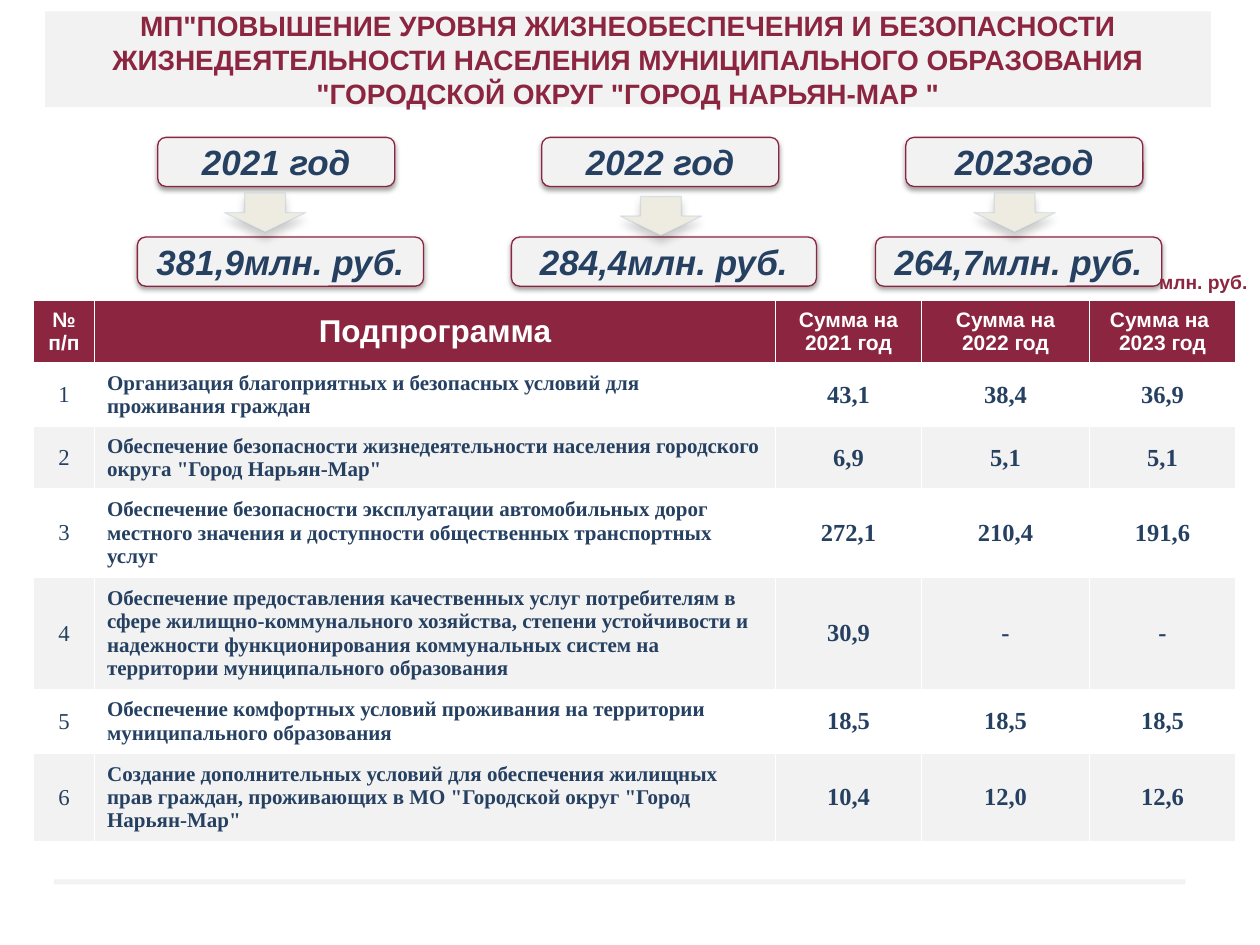
from lxml import etree
from pptx import Presentation
from pptx import util as u
from pptx.dml.color import RGBColor
from pptx.enum import shapes, text
from pptx.oxml import ns

WINE, NAVY, PALE, WHITE = "8C2540", "254061", "F2F2F2", "FFFFFF"
SANS, SERIF = "Arial", "Times New Roman"

TITLE = ('МП"ПОВЫШЕНИЕ УРОВНЯ ЖИЗНЕОБЕСПЕЧЕНИЯ И БЕЗОПАСНОСТИ '
         'ЖИЗНЕДЕЯТЕЛЬНОСТИ НАСЕЛЕНИЯ МУНИЦИПАЛЬНОГО ОБРАЗОВАНИЯ '
         '"ГОРОДСКОЙ ОКРУГ "ГОРОД НАРЬЯН-МАР "')

# year, total, left of year box, left and width of total box, arrow left and top (cm)
YEARS = [
    ("2021 год", "381,9млн. руб.", 3.18, 2.77, 5.77, 4.52, 3.89),
    ("2022 год", "284,4млн. руб.", 10.92, 10.31, 6.15, 12.5, 3.96),
    ("2023год", "264,7млн. руб.", 18.26, 17.65, 5.77, 19.63, 3.89),
]

HEADER = ["№ п/п", "Подпрограмма", "Сумма на 2021 год", "Сумма на 2022 год",
          "Сумма на \n2023 год"]
PROGRAMMES = [
    ("Организация благоприятных и безопасных условий для проживания граждан",
     "43,1", "38,4", "36,9"),
    ("Обеспечение безопасности жизнедеятельности населения городского округа "
     '"Город Нарьян-Мар"', "6,9", "5,1", "5,1"),
    ("Обеспечение безопасности эксплуатации автомобильных дорог местного значения "
     "и доступности общественных транспортных услуг", "272,1", "210,4", "191,6"),
    ("Обеспечение предоставления качественных услуг потребителям в сфере "
     "жилищно-коммунального хозяйства, степени устойчивости и надежности "
     "функционирования коммунальных систем на территории муниципального образования",
     "30,9", "-", "-"),
    ("Обеспечение комфортных условий проживания на территории муниципального "
     "образования", "18,5", "18,5", "18,5"),
    ("Создание дополнительных условий для обеспечения жилищных прав граждан, "
     'проживающих в МО "Городской округ "Город Нарьян-Мар"', "10,4", "12,0", "12,6"),
]
COLUMN_WIDTHS = [1.24, 13.72, 2.95, 3.38, 2.95]
ROW_HEIGHTS = [1.26, 1.28, 1.26, 1.78, 2.26, 1.29, 1.78]


def color(hex_value):
    return RGBColor.from_string(hex_value)


def paint(item, hex_value):
    item.fill.solid()
    item.fill.fore_color.rgb = color(hex_value)


def write(frame, words, size, font=SANS, ink=NAVY, bold=True, italic=False,
          align=text.PP_ALIGN.CENTER):
    frame.text = words
    for paragraph in frame.paragraphs:
        paragraph.alignment = align
        for run in paragraph.runs:
            run.font.size = u.Pt(size)
            run.font.name = font
            run.font.bold = bold
            run.font.italic = italic
            run.font.color.rgb = color(ink)


def add_color(parent, hex_value, opacity=100):
    node = etree.SubElement(parent, ns.qn("a:srgbClr"), val=hex_value)
    if opacity < 100:
        etree.SubElement(node, ns.qn("a:alpha"), val=str(opacity * 1000))


def add_shadow(shape, opacity, blur, distance):
    """Cast a black shadow straight down; blur and distance are in points."""
    effects = shape._element.spPr.find(ns.qn("a:effectLst"))
    outer = etree.SubElement(effects, ns.qn("a:outerShdw"), blurRad=str(u.Pt(blur)),
                             dist=str(u.Pt(distance)), dir="5400000", rotWithShape="0")
    add_color(outer, "000000", opacity)


def add_block(slide, kind, left, top, width, height, fill, line=None):
    block = slide.shapes.add_shape(kind, u.Cm(left), u.Cm(top), u.Cm(width), u.Cm(height))
    block.shadow.inherit = False
    paint(block, fill)
    if line:
        block.line.color.rgb = color(line)
        block.line.width = u.Pt(0.75)
    else:
        block.line.fill.background()
    return block


def add_label_box(slide, words, left, top, width):
    box = add_block(slide, shapes.MSO_SHAPE.ROUNDED_RECTANGLE, left, top, width, 0.99,
                    PALE, WINE)
    add_shadow(box, 38, 3.1, 1.6)
    box.text_frame.vertical_anchor = text.MSO_ANCHOR.MIDDLE
    write(box.text_frame, words, 20, italic=True)


def add_arrow(slide, left, top):
    arrow = add_block(slide, shapes.MSO_SHAPE.DOWN_ARROW, left, top, 1.65, 0.79,
                      "EEECE1", "4F81BD")
    add_shadow(arrow, 20, 5, 4)
    outline = arrow._element.spPr.find(ns.qn("a:ln")).find(ns.qn("a:solidFill"))
    outline.clear()
    add_color(outline, "4F81BD", 15)


def add_title(slide):
    title = slide.shapes.title
    title.left, title.top = u.Cm(0.91), u.Cm(0.23)
    title.width, title.height = u.Cm(23.5), u.Cm(1.93)
    paint(title, PALE)
    title.text_frame.auto_size = text.MSO_AUTO_SIZE.NONE
    title.text_frame.vertical_anchor = text.MSO_ANCHOR.MIDDLE
    write(title.text_frame, TITLE, 16, ink=WINE)


def fill_cell(cell, words, fill, tight=False, **style):
    cell.vertical_anchor = text.MSO_ANCHOR.MIDDLE
    side, edge = (0.03, 0.02) if tight else (0.25, 0.13)
    cell.margin_left = cell.margin_right = u.Cm(side)
    cell.margin_top = cell.margin_bottom = u.Cm(edge)
    properties = cell._tc.get_or_add_tcPr()
    for border in ("a:lnL", "a:lnR", "a:lnT", "a:lnB"):
        line = etree.SubElement(properties, ns.qn(border), w=str(u.Pt(1)))
        add_color(etree.SubElement(line, ns.qn("a:solidFill")), WHITE)
    paint(cell, fill)
    write(cell.text_frame, words, **style)


def add_programme_table(slide):
    table = slide.shapes.add_table(
        len(ROW_HEIGHTS), len(COLUMN_WIDTHS), u.Cm(0.67), u.Cm(6.06),
        u.Cm(sum(COLUMN_WIDTHS)), u.Cm(sum(ROW_HEIGHTS))).table
    for column, width in zip(table.columns, COLUMN_WIDTHS):
        column.width = u.Cm(width)
    for row, height in zip(table.rows, ROW_HEIGHTS):
        row.height = u.Cm(height)

    for column, heading in enumerate(HEADER):
        fill_cell(table.cell(0, column), heading, WINE, ink=WHITE,
                  size=18 if column == 1 else 12)
    for number, (programme, *sums) in enumerate(PROGRAMMES, 1):
        fill = WHITE if number % 2 else PALE
        fill_cell(table.cell(number, 0), str(number), fill, size=13, font=SERIF, bold=False)
        fill_cell(table.cell(number, 1), programme, fill, size=12, font=SERIF,
                  align=text.PP_ALIGN.LEFT)
        for column, amount in enumerate(sums, 2):
            fill_cell(table.cell(number, column), amount, fill, tight=True, size=14,
                      font=SERIF)


def add_unit_note(slide):
    note = slide.shapes.add_textbox(u.Cm(22.6), u.Cm(5.33), u.Cm(2.8), u.Cm(0.73))
    note.text_frame.word_wrap = True
    write(note.text_frame, "млн. руб.", 11, ink=WINE, align=text.PP_ALIGN.RIGHT)


def main():
    deck = Presentation()
    deck.slide_width, deck.slide_height = u.Cm(25.4), u.Cm(19.05)
    slide = deck.slides.add_slide(deck.slide_layouts[5])
    add_title(slide)
    for year, total, year_left, total_left, total_width, arrow_left, arrow_top in YEARS:
        add_label_box(slide, year, year_left, 2.77, 4.78)
        add_label_box(slide, total, total_left, 4.78, total_width)
        add_arrow(slide, arrow_left, arrow_top)
    add_programme_table(slide)
    add_unit_note(slide)
    add_block(slide, shapes.MSO_SHAPE.RECTANGLE, 1.09, 17.73, 22.81, 0.1, PALE)
    deck.save("out.pptx")


if __name__ == "__main__":
    main()
